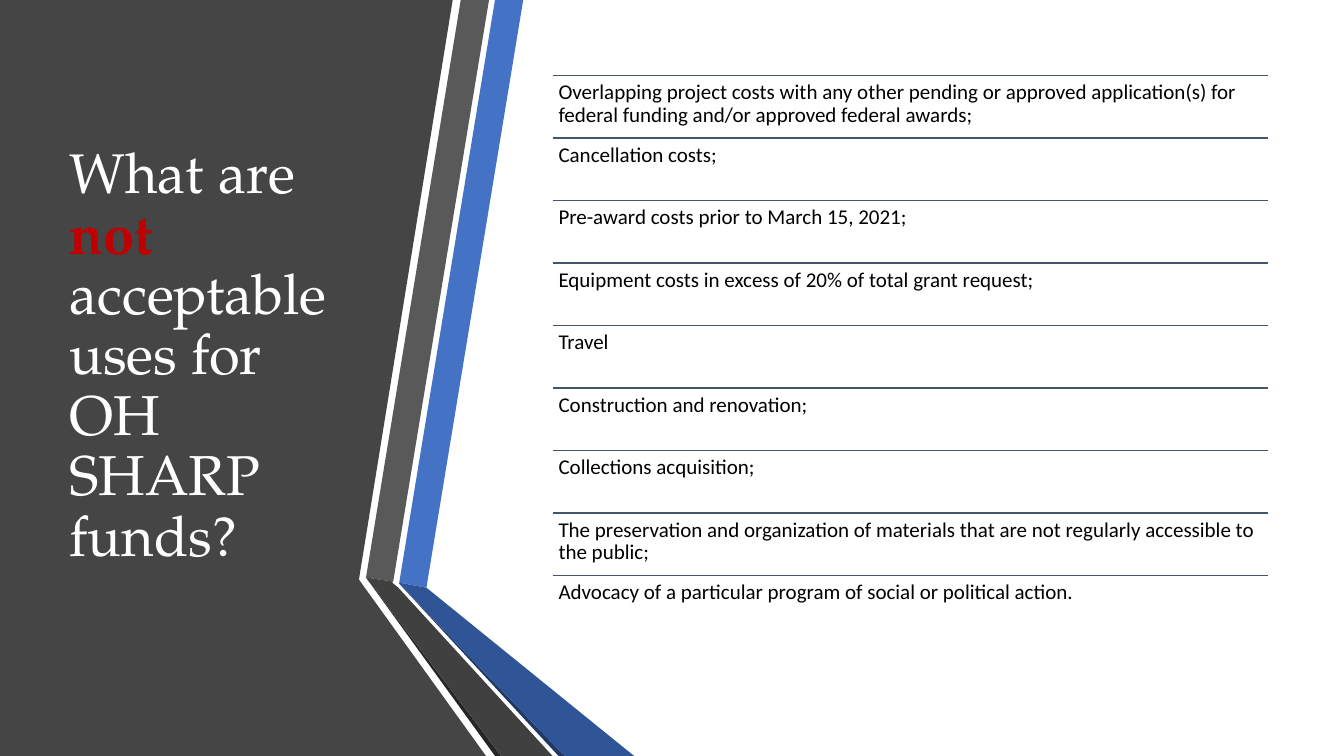
from lxml import etree
from pptx import Presentation
from pptx.dml.color import RGBColor
from pptx.enum.shapes import MSO_CONNECTOR
from pptx.enum.text import MSO_ANCHOR
from pptx.oxml.ns import qn
from pptx.util import Inches, Pt

LINE = MSO_CONNECTOR.STRAIGHT
TOP, MIDDLE = MSO_ANCHOR.TOP, MSO_ANCHOR.MIDDLE

WHITE = RGBColor(0xFF, 0xFF, 0xFF)
BLACK = RGBColor(0x00, 0x00, 0x00)
RED = RGBColor(0xC0, 0x00, 0x00)
SLATE = RGBColor(0x44, 0x54, 0x6A)
PANEL = RGBColor(0x45, 0x45, 0x45)
GRAY = RGBColor(0x59, 0x59, 0x59)
DARK = RGBColor(0x40, 0x40, 0x40)
COAL = RGBColor(0x26, 0x26, 0x26)
BLUE = RGBColor(0x44, 0x72, 0xC4)
DEEP = RGBColor(0x2F, 0x55, 0x97)
NAVY = RGBColor(0x20, 0x38, 0x64)

# Content
TITLE = [
    ("What are ", WHITE, False),
    ("not", RED, True),
    (" acceptable uses for OH SHARP funds?", WHITE, False),
]
COSTS = [
    "Overlapping project costs with any other pending or approved "
    "application(s) for federal funding and/or approved federal awards;",
    "Cancellation costs;",
    "Pre-award costs prior to March 15, 2021;",
    "Equipment costs in excess of 20% of total grant request;",
    "Travel",
    "Construction and renovation;",
    "Collections acquisition;",
    "The preservation and organization of materials that are not "
    "regularly accessible to the public;",
    "Advocacy of a particular program of social or political action.",
]

# Slide and grid, in inches
WIDE, HIGH = 13.33, 7.5
HEAD, BODY = HIGH * 0.1, 5.58
LEFT, SPAN = 5.48, 7.1
ROW = BODY / len(COSTS)

# Panel and folded ribbons, back to front: colour and corners
BANDS = [
    (PANEL, [(0, 0), (3.53, 0), (4.49, 0), (3.56, 5.75), (4.82, HIGH), (0, HIGH)]),
    (BLUE, [(3.96, 5.78), (4.23, 5.83), (5.19, 0), (4.91, 0)]),
    (GRAY, [(4.85, 0), (4.57, 0), (3.63, 5.73), (3.9, 5.77)]),
    (COAL, [(3.63, 5.73), (4.91, HIGH), (4.97, HIGH)]),
    (NAVY, [(3.96, 5.79), (5.54, HIGH), (5.6, HIGH)]),
    (DEEP, [(3.96, 5.79), (5.6, HIGH), (6.29, HIGH), (4.23, 5.83), (3.96, 5.78)]),
    (DARK, [(5.48, HIGH), (3.95, 5.83), (3.89, 5.78), (3.9, 5.77),
            (3.63, 5.73), (4.97, HIGH)]),
]


def add_band(slide, color, spots):
    dots = [(Inches(x), Inches(y)) for x, y in spots]
    pen = slide.shapes.build_freeform(*dots[0])
    pen.add_line_segments(dots[1:], close=True)
    band = pen.convert_to_shape()
    band.shadow.inherit = False
    band.fill.solid()
    band.fill.fore_color.rgb = color
    band.line.fill.background()


def add_text(slide, area, parts, font, size, anchor, pad):
    box = slide.shapes.add_textbox(*(Inches(v) for v in area))
    frame = box.text_frame
    frame.word_wrap = True
    frame.vertical_anchor = anchor
    frame.margin_left = frame.margin_right = Inches(pad[0])
    frame.margin_top = frame.margin_bottom = Inches(pad[1])
    para = frame.paragraphs[0]
    para.line_spacing = 0.9
    for text, color, bold in parts:
        run = para.add_run()
        run.text = text
        run.font.name = font
        run.font.size = Pt(size)
        run.font.bold = bold
        run.font.color.rgb = color


def add_rule(slide, y):
    rule = slide.shapes.add_connector(
        LINE, Inches(LEFT), Inches(y), Inches(LEFT + SPAN), Inches(y))
    rule.line.color.rgb = SLATE
    rule.line.width = Pt(1)
    etree.SubElement(rule._element.spPr, qn("a:effectLst"))


def main():
    deck = Presentation()
    deck.slide_width, deck.slide_height = Inches(WIDE), Inches(HIGH)
    slide = deck.slides.add_slide(deck.slide_layouts[6])

    # Left panel and ribbons
    for color, spots in BANDS:
        add_band(slide, color, spots)

    # Title
    add_text(slide, (0.59, HEAD, 3.04, BODY), TITLE,
             "TeX Gyre Pagella", 40, MIDDLE, (0.1, 0.05))

    # Ruled list of costs
    for i, cost in enumerate(COSTS):
        y = HEAD + i * ROW
        add_rule(slide, y)
        add_text(slide, (LEFT, y, SPAN, ROW), [(cost, BLACK, False)],
                 "Calibri", 15, TOP, (0.06, 0.06))

    deck.save("out.pptx")


if __name__ == "__main__":
    main()
